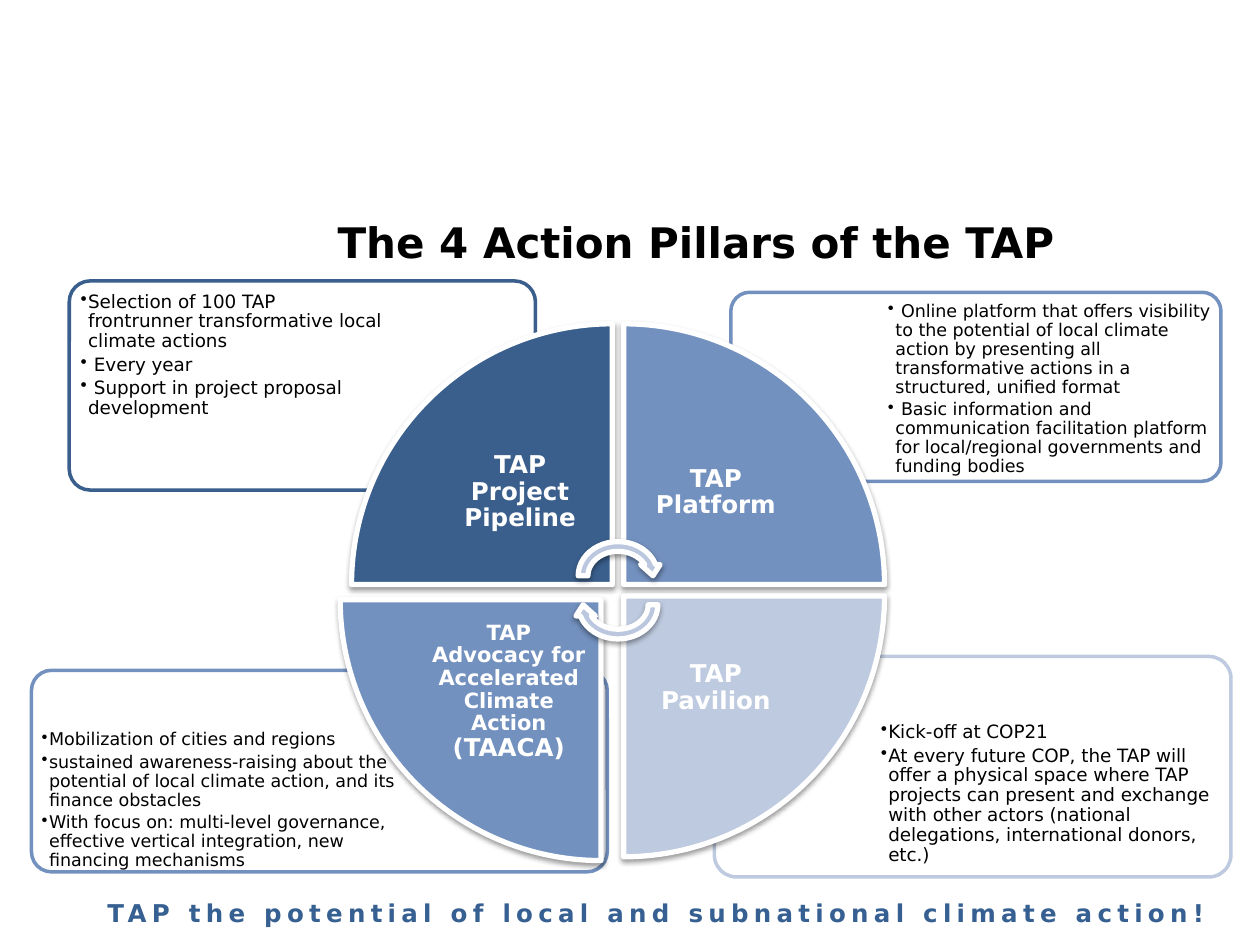
from lxml import etree
from pptx import Presentation, util as u
from pptx.dml.color import RGBColor
from pptx.enum import shapes as s, text as t
from pptx.oxml import ns

CELL = 0.1
COLS, ROWS = 100, 75
FONT = "DejaVu Sans"
NAVY, BLUE, PALE, ARC = "3A5F8C", "7391BF", "BECADF", "BBC7DE"
WHITE, BLACK, SLOGAN = "FFFFFF", "000000", "376092"
KIND = s.MSO_SHAPE
MID = t.PP_ALIGN.CENTER


def grid(n):
    return u.Inches(n * CELL)


def tone(code):
    return RGBColor.from_string(code)


def node(up, tag, **attrs):
    return etree.SubElement(up, ns.qn(tag), {k: str(v) for k, v in attrs.items()})


def style(para, size, color, bold=False):
    font = para.font
    font.name, font.bold = FONT, bold
    if size:
        font.size = u.Pt(size)
    font.color.rgb = tone(color)


def label(slide, box, pad=None, anchor=t.MSO_ANCHOR.TOP):
    frame = slide.shapes.add_textbox(*map(grid, box)).text_frame
    frame.word_wrap = True
    frame.vertical_anchor = anchor
    if pad is not None:
        frame.margin_left = frame.margin_right = grid(pad)
        frame.margin_top = frame.margin_bottom = grid(pad)
    return frame


def form(slide, kind, box, fill, line, width, turn=0):
    shape = slide.shapes.add_shape(kind, *map(grid, box))
    shape.shadow.inherit = False
    shape.fill.solid()
    shape.fill.fore_color.rgb = tone(fill)
    shape.line.color.rgb = tone(line)
    shape.line.width = u.Pt(width)
    shape.rotation = turn
    return shape


def shade(shape):
    list_ = shape._element.spPr.find(ns.qn("a:effectLst"))
    cast = node(list_, "a:outerShdw", blurRad=u.Pt(3.1), dist=u.Pt(1.6),
                dir=5400000, algn="ctr", rotWithShape=0)
    node(node(cast, "a:srgbClr", val=BLACK), "a:alpha", val=38000)


def banner(slide, box, words, size, color, space=0):
    para = label(slide, box).paragraphs[0]
    para.alignment = MID
    run = para.add_run()
    run.text = words
    style(para, size, color, True)
    if space:
        run._r.get_or_add_rPr().set("spc", str(space))


def panel(slide, box, color, size, pad, right, low, items):
    x, y, w, h = box
    card = form(slide, KIND.ROUNDED_RECTANGLE, box, WHITE, color, 2)
    card.adjustments[0] = 0.1
    paint = card._element.spPr.find(ns.qn("a:solidFill"))
    node(paint[0], "a:alpha", val=90000)
    gap = 0.4
    area = (x + gap + 0.3 * w * right, y + gap + 0.25 * h * low,
            0.7 * w - 2 * gap, 0.75 * h - 2 * gap)
    frame = label(slide, area, pad)
    for i, item in enumerate(items):
        para = frame.add_paragraph() if i else frame.paragraphs[0]
        para.text = item
        para.line_spacing = 0.9
        para.space_after = u.Pt(2)
        props = para._p.get_or_add_pPr()
        props.set("marL", str(u.Inches(0.06)))
        props.set("indent", str(-u.Inches(0.06)))
        node(props, "a:buChar", char="•")
        style(para, size, BLACK)


def wedge(slide, box, turn, color, pad, parts):
    x, y, w, h = box
    shade(form(slide, KIND.PIE_WEDGE, box, color, WHITE, 3, turn))
    side = 0.707
    left = x + (1 - side) * w * (turn in (0, 270))
    top = y + (1 - side) * h * (turn in (0, 90))
    frame = label(slide, (left, top, side * w, side * h), pad, t.MSO_ANCHOR.MIDDLE)
    para = frame.paragraphs[0]
    para.alignment = MID
    para.line_spacing = 0.9
    style(para, None, WHITE, True)
    for words, size in parts:
        run = para.add_run()
        run.text = words
        run.font.size = u.Pt(size)


def cycle(slide, box, drop):
    x, y, w, h = box
    for turn, top in ((0, y), (180, y + drop)):
        shade(form(slide, KIND.CIRCULAR_ARROW, (x, top, w, h), ARC, WHITE, 3, turn))


PANELS = [
    ((56.7, 52.1, 41, 17.5), PALE, 10.5, 0.5, True, True, [
        "Kick-off at COP21",
        "At every future COP, the TAP will offer a physical space where TAP projects "
        "can present and exchange with other actors (national delegations, "
        "international donors, etc.)"]),
    ((2.5, 53.2, 45.7, 16), BLUE, 10, 0.4, False, True, [
        "Mobilization of cities and regions",
        "sustained awareness-raising about the potential of local climate action, "
        "and its finance obstacles",
        "With focus on: multi-level governance, effective vertical integration, "
        "new financing mechanisms"]),
    ((58, 23.2, 38.9, 15), BLUE, 10, 0.4, True, False, [
        " Online platform that offers visibility to the potential of local climate "
        "action by presenting all transformative actions in a structured, unified format",
        " Basic information and communication facilitation platform for local/regional "
        "governments and funding bodies"]),
    ((5.5, 22.3, 37, 16.6), NAVY, 10.5, 0.5, False, False, [
        "Selection of 100 TAP frontrunner transformative local climate actions",
        " Every year",
        " Support in project proposal development"]),
]

SIZE = 20.7
WEDGES = [
    (27.9, 25.7, 0, NAVY, 1.1, [("TAP Project Pipeline", 14)]),
    (49.5, 25.7, 90, BLUE, 1.1, [("TAP Platform", 14)]),
    (49.5, 47.3, 180, PALE, 1.1, [("TAP Pavilion", 14)]),
    (27, 47.6, 270, BLUE, 0.9, [
        ("TAP Advocacy for Accelerated Climate Action ", 12), ("(TAACA)", 14)]),
]


def main():
    deck = Presentation()
    deck.slide_width, deck.slide_height = grid(COLS), grid(ROWS)
    slide = deck.slides.add_slide(deck.slide_layouts[6])
    banner(slide, (-1.4, 70.8, 107, 3.4),
           "TAP the potential of local and subnational climate action!", 14, SLOGAN, 300)
    banner(slide, (22.1, 16.7, 66.3, 5), "The 4 Action Pillars of the TAP", 24, BLACK)
    for row in PANELS:
        panel(slide, *row)
    for x, y, *rest in WEDGES:
        wedge(slide, (x, y, SIZE, SIZE), *rest)
    cycle(slide, (45.5, 42.6, 7.1, 6.2), 2.3)
    deck.save("out.pptx")


if __name__ == "__main__":
    main()
